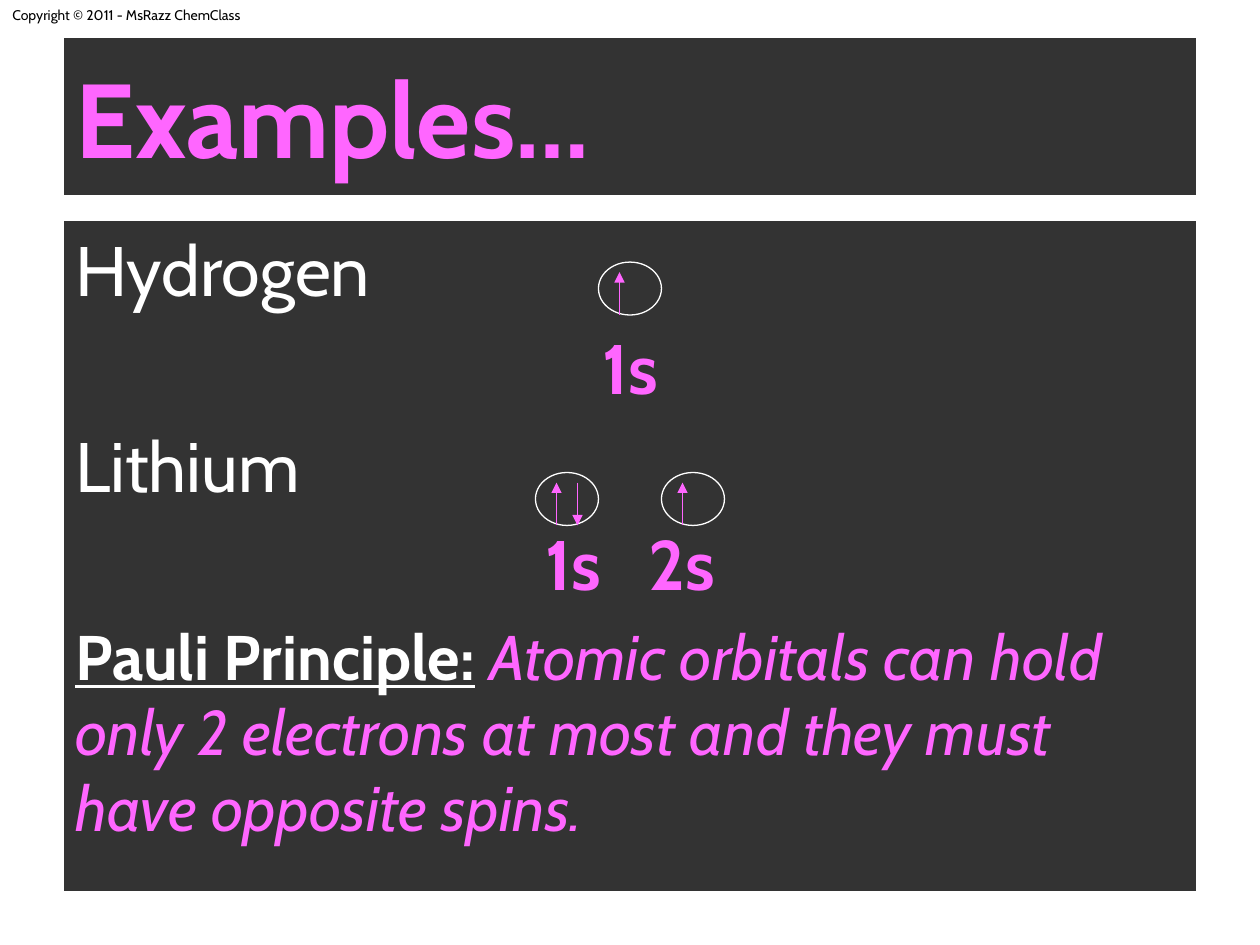
"""Build a slide of orbital diagrams illustrating the Pauli principle."""
from pptx import Presentation
from pptx.dml.color import RGBColor
from pptx.enum.shapes import MSO_CONNECTOR, MSO_SHAPE
from pptx.enum.text import MSO_ANCHOR, PP_ALIGN
from pptx.oxml.ns import qn
from pptx.util import Inches, Pt
from lxml.etree import SubElement

BLACK = RGBColor(0x00, 0x00, 0x00)
WHITE = RGBColor(0xFF, 0xFF, 0xFF)
PINK = RGBColor(0xFF, 0x66, 0xFF)
FONT = "Cabin"
LEFT, CENTER = PP_ALIGN.LEFT, PP_ALIGN.CENTER

COPYRIGHT = [(LEFT, (), [("Copyright © 2011 - MsRazz ChemClass", 8, BLACK, "")])]
TITLE = [(LEFT, (), [("Examples…", 60, PINK, "b")])]
BODY = [
    (LEFT, (), [("Hydrogen", 40, WHITE, "")]),
    (CENTER, (), [("1s", 40, PINK, "b")]),
    (LEFT, (), [("Lithium", 40, WHITE, "")]),
    (LEFT, (3.95, 4.81), [("\t1s\t2s", 40, PINK, "b")]),
    (LEFT, (), [
        ("Pauli Principle:", 36, WHITE, "bu"),
        (" ", 36, WHITE, "b"),
        ("Atomic orbitals can hold only 2 electrons at most "
         "and they must have opposite spins.", 36, PINK, "i"),
    ]),
]
ORBITALS = [(4.75, 2.08, ["up"]), (4.25, 3.75, ["up", "down"]), (5.25, 3.75, ["up"])]
ORBITAL_W, ORBITAL_H = 0.5, 0.42
ARROW_INSET = 0.08
MARGIN, PANEL_W = 0.5, 9


def write(tf, paragraphs):
    tf.word_wrap = True
    for i, (align, stops, runs) in enumerate(paragraphs):
        p = tf.add_paragraph() if i else tf.paragraphs[0]
        p.alignment = align
        p.space_before = Pt(0.2 * runs[0][1] if i else 0)
        if stops:
            tabs = SubElement(p._p.get_or_add_pPr(), qn("a:tabLst"))
            for stop in stops:
                SubElement(tabs, qn("a:tab"), pos=str(Inches(stop)), algn="ctr")
        for text, size, color, style in runs:
            r = p.add_run()
            r.text = text
            r.font.name, r.font.size = FONT, Pt(size)
            r.font.color.rgb = color
            r.font.bold, r.font.italic = "b" in style, "i" in style
            r.font.underline = "u" in style


def add_outline(s, kind, x, y, w, h):
    sp = s.shapes.add_shape(kind, Inches(x), Inches(y), Inches(w), Inches(h))
    sp.shadow.inherit = False
    sp.fill.background()
    sp.line.color.rgb, sp.line.width = WHITE, Pt(0.75)
    return sp


def add_panel(s, y, h, paragraphs, anchor):
    sp = add_outline(s, MSO_SHAPE.RECTANGLE, MARGIN, y, PANEL_W, h)
    sp.fill.solid()
    sp.fill.fore_color.rgb = BLACK
    color = sp._element.spPr.find(qn("a:solidFill"))[0]
    SubElement(color, qn("a:alpha"), val="80000")
    sp.text_frame.vertical_anchor = anchor
    write(sp.text_frame, paragraphs)


def add_electron(s, x, start, end):
    line = s.shapes.add_connector(
        MSO_CONNECTOR.STRAIGHT, Inches(x), Inches(start), Inches(x), Inches(end))
    line.line.color.rgb, line.line.width = PINK, Pt(0.75)
    SubElement(line.line._get_or_add_ln(), qn("a:tailEnd"), type="triangle")
    SubElement(line._element.spPr, qn("a:effectLst"))


def main():
    prs = Presentation()
    prs.slide_width, prs.slide_height = Inches(10), Inches(7.5)
    s = prs.slides.add_slide(prs.slide_layouts[6])

    box = s.shapes.add_textbox(0, 0, Inches(2.37), Inches(0.24))
    write(box.text_frame, COPYRIGHT)
    add_panel(s, 0.3, 1.25, TITLE, MSO_ANCHOR.MIDDLE)
    add_panel(s, 1.75, 5.33, BODY, MSO_ANCHOR.TOP)

    for x, y, spins in ORBITALS:
        add_outline(s, MSO_SHAPE.OVAL, x, y, ORBITAL_W, ORBITAL_H)
        top, bottom = y + ARROW_INSET, y + ORBITAL_H
        for i, spin in enumerate(spins, 1):
            ends = (bottom, top) if spin == "up" else (top, bottom)
            add_electron(s, x + i * ORBITAL_W / 3, *ends)

    prs.save("out.pptx")


if __name__ == "__main__":
    main()
